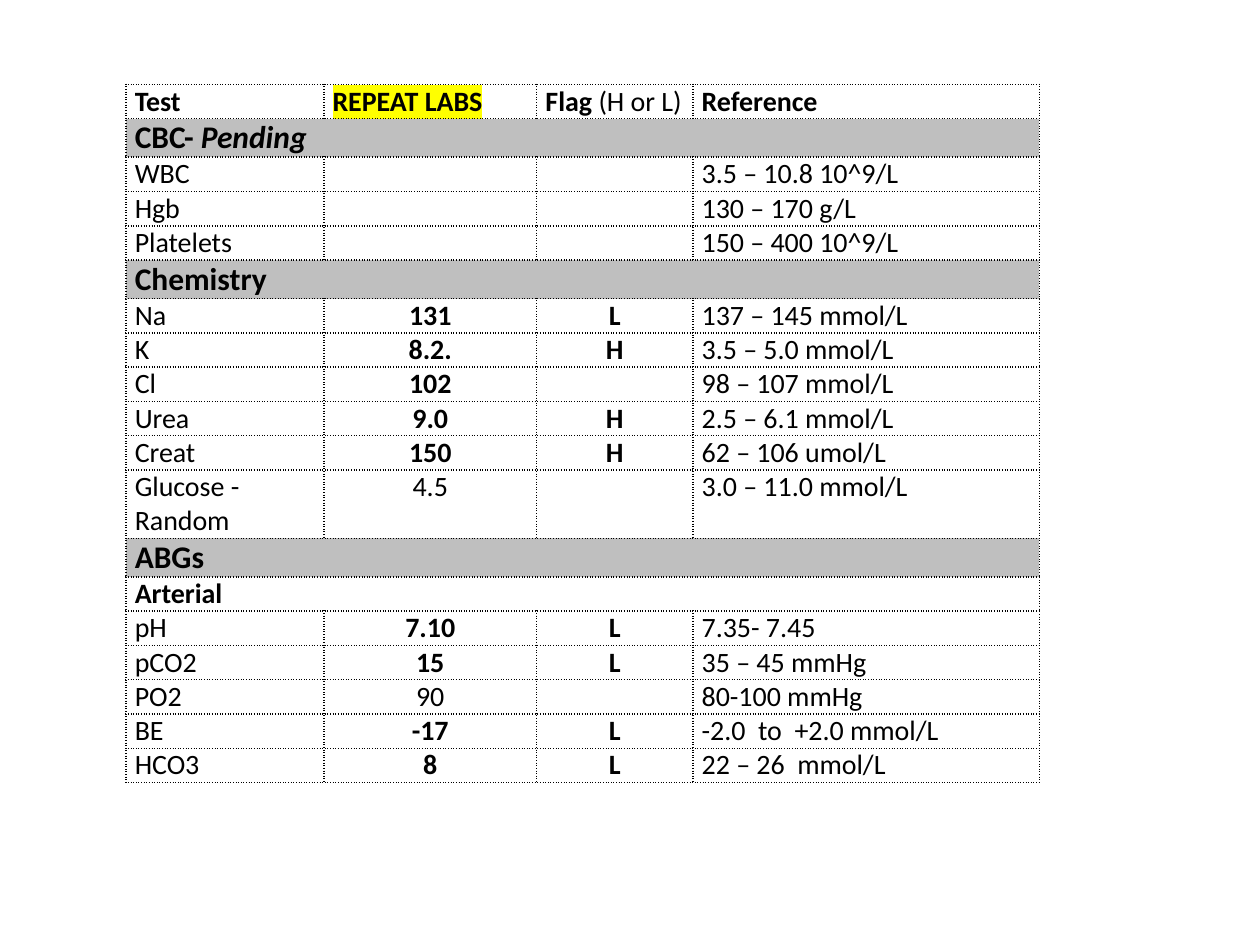
from dataclasses import dataclass

from lxml.etree import SubElement
from pptx import Presentation
from pptx.dml.color import RGBColor
from pptx.enum.text import PP_ALIGN
from pptx.oxml import parse_xml
from pptx.oxml.ns import nsdecls, qn
from pptx.table import Table, _Cell
from pptx.util import Inches, Pt

BLACK = RGBColor(0x00, 0x00, 0x00)
WHITE = RGBColor(0xFF, 0xFF, 0xFF)
GRAY = RGBColor(0xBF, 0xBF, 0xBF)
YELLOW = RGBColor(0xFF, 0xFF, 0x00)
FONT = "Calibri"
BODY_SIZE = 16
SECTION_SIZE = 18
COLUMN_WIDTHS = (1.57, 1.69, 1.24, 2.75)
ROW_HEIGHT = 0.27
SECTION_HEIGHT = 0.3


@dataclass(frozen=True)
class Span:
    text: str
    bold: bool = False
    italic: bool = False
    highlight: RGBColor | None = None


@dataclass(frozen=True)
class Section:
    spans: tuple[Span, ...]
    size: int = SECTION_SIZE
    fill: RGBColor | None = GRAY


@dataclass(frozen=True)
class Lab:
    test: str
    result: str
    flag: str
    reference: str
    abnormal: bool = True


HEADER = (
    (Span("Test", bold=True),),
    (Span("REPEAT LABS", bold=True, highlight=YELLOW),),
    (Span("Flag ", bold=True), Span("(H or L)")),
    (Span("Reference", bold=True),),
)
ROWS = (
    Section((Span("CBC- ", bold=True), Span("Pending", bold=True, italic=True))),
    Lab("WBC", "", "", "3.5 – 10.8 10^9/L"),
    Lab("Hgb", "", "", "130 – 170 g/L"),
    Lab("Platelets", "", "", "150 – 400 10^9/L"),
    Section((Span("Chemistry", bold=True),)),
    Lab("Na", "131", "L", "137 – 145 mmol/L"),
    Lab("K", "8.2.", "H", "3.5 – 5.0 mmol/L"),
    Lab("Cl", "102", "", "98 – 107 mmol/L"),
    Lab("Urea", "9.0", "H", "2.5 – 6.1 mmol/L"),
    Lab("Creat", "150", "H", "62 – 106 umol/L"),
    Lab("Glucose - Random", "4.5", "", "3.0 – 11.0 mmol/L", abnormal=False),
    Section((Span("ABGs", bold=True),)),
    Section((Span("Arterial", bold=True),), size=BODY_SIZE, fill=None),
    Lab("pH", "7.10", "L", "7.35- 7.45"),
    Lab("pCO2", "15", "L", "35 – 45 mmHg"),
    Lab("PO2", "90", "", "80-100 mmHg", abnormal=False),
    Lab("BE", "-17", "L", "-2.0  to  +2.0 mmol/L"),
    Lab("HCO3", "8", "L", "22 – 26  mmol/L"),
)


def style_cell(cell: _Cell, fill: RGBColor | None) -> None:
    cell.margin_left = cell.margin_right = Inches(0.07)
    cell.margin_top = cell.margin_bottom = 0
    if fill is None:
        cell.fill.background()
    else:
        cell.fill.solid()
        cell.fill.fore_color.rgb = fill
    properties = cell._tc.get_or_add_tcPr()
    for index, side in enumerate(("lnL", "lnR", "lnT", "lnB")):
        border = parse_xml(
            f'<a:{side} {nsdecls("a")} w="{Pt(1)}"><a:solidFill>'
            f'<a:srgbClr val="{BLACK}"/></a:solidFill>'
            f'<a:prstDash val="sysDot"/></a:{side}>'
        )
        properties.insert(index, border)


def write_cell(
    cell: _Cell,
    spans: tuple[Span, ...],
    size: int = BODY_SIZE,
    alignment: PP_ALIGN = PP_ALIGN.LEFT,
) -> None:
    paragraph = cell.text_frame.paragraphs[0]
    paragraph.alignment = alignment
    paragraph.font.name = FONT
    paragraph.font.size = Pt(size)
    paragraph.font.color.rgb = BLACK
    for span in spans:
        run = paragraph.add_run()
        run.text = span.text
        run.font.bold = span.bold
        run.font.italic = span.italic
        if span.highlight is not None:
            highlight = SubElement(run.font._element, qn("a:highlight"))
            SubElement(highlight, qn("a:srgbClr"), val=str(span.highlight))
    if not spans:
        SubElement(paragraph._p, qn("a:endParaRPr"), sz=str(size * 100))


def write_section(table: Table, row: int, section: Section) -> None:
    last_column = len(COLUMN_WIDTHS) - 1
    table.cell(row, 0).merge(table.cell(row, last_column))
    for column in range(len(COLUMN_WIDTHS)):
        style_cell(table.cell(row, column), section.fill)
    write_cell(table.cell(row, 0), section.spans, section.size)
    if section.size == SECTION_SIZE:
        table.rows[row].height = Inches(SECTION_HEIGHT)


def write_lab(table: Table, row: int, lab: Lab) -> None:
    columns = (
        (lab.test, False, PP_ALIGN.LEFT),
        (lab.result, lab.abnormal, PP_ALIGN.CENTER),
        (lab.flag, True, PP_ALIGN.CENTER),
        (lab.reference, False, PP_ALIGN.LEFT),
    )
    for column, (text, bold, alignment) in enumerate(columns):
        cell = table.cell(row, column)
        style_cell(cell, None)
        spans = (Span(text, bold=bold),) if text else ()
        write_cell(cell, spans, alignment=alignment)


def main() -> None:
    presentation = Presentation()
    presentation.slide_width = Inches(10)
    presentation.slide_height = Inches(7.5)
    slide = presentation.slides.add_slide(presentation.slide_layouts[6])
    row_count = len(ROWS) + 1
    table = slide.shapes.add_table(
        row_count, len(COLUMN_WIDTHS), Inches(1), Inches(0.67),
        Inches(sum(COLUMN_WIDTHS)), Inches(ROW_HEIGHT * row_count),
    ).table
    table.first_row = False
    table.horz_banding = False
    for column, width in zip(table.columns, COLUMN_WIDTHS):
        column.width = Inches(width)
    for row in table.rows:
        row.height = Inches(ROW_HEIGHT)
    for column, spans in enumerate(HEADER):
        cell = table.cell(0, column)
        style_cell(cell, WHITE)
        write_cell(cell, spans)
    for row, entry in enumerate(ROWS, start=1):
        if isinstance(entry, Section):
            write_section(table, row, entry)
        else:
            write_lab(table, row, entry)
    presentation.save("out.pptx")


if __name__ == "__main__":
    main()
